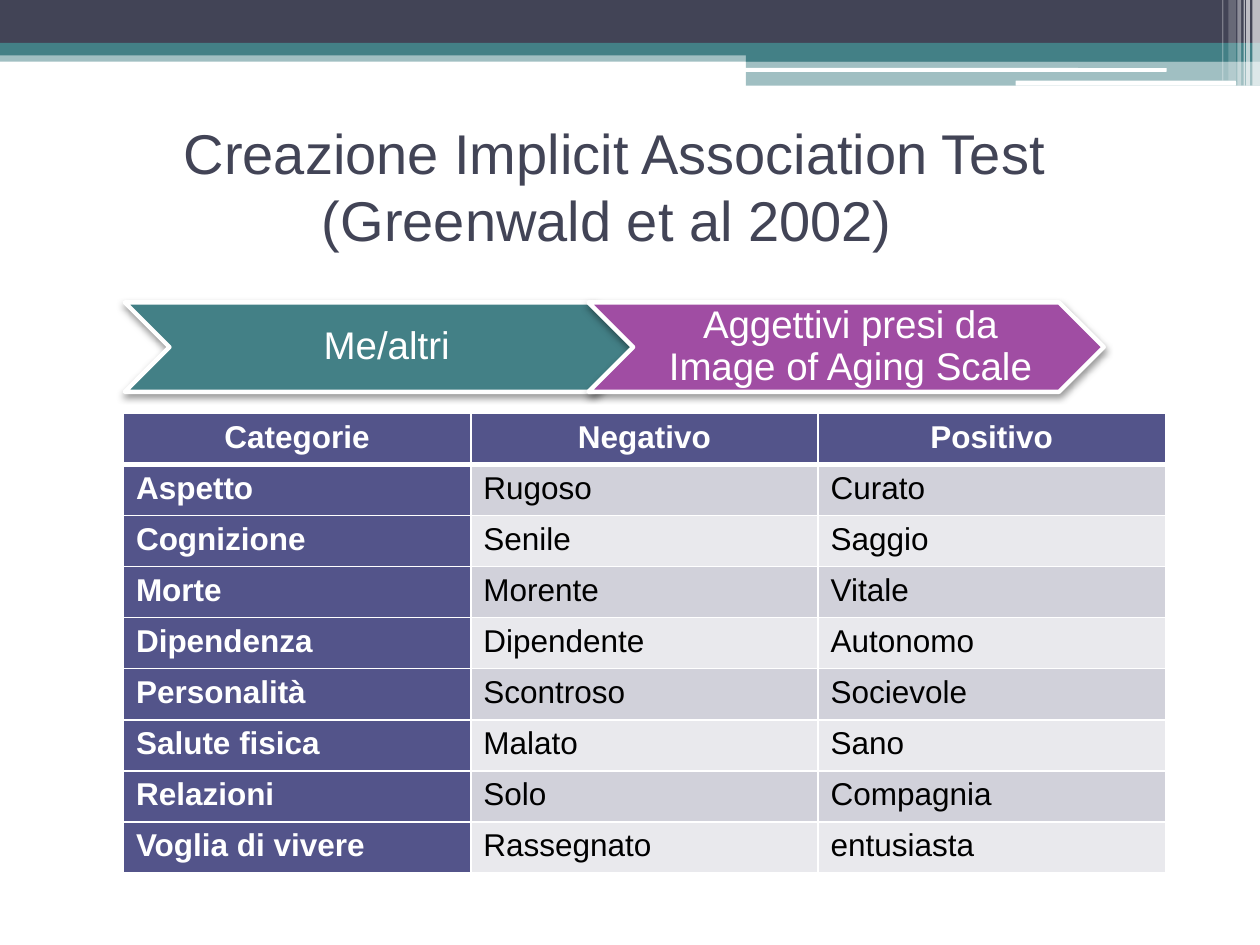
from lxml import etree
from pptx import Presentation
from pptx.dml.color import RGBColor
from pptx.enum.shapes import MSO_SHAPE
from pptx.enum.text import MSO_ANCHOR, PP_ALIGN
from pptx.oxml.ns import qn
from pptx.util import Inches, Pt

CENTER, LEFT = PP_ALIGN.CENTER, PP_ALIGN.LEFT
MIDDLE = MSO_ANCHOR.MIDDLE
RECT, ROUND, CHEVRON = MSO_SHAPE.RECTANGLE, MSO_SHAPE.ROUNDED_RECTANGLE, MSO_SHAPE.CHEVRON
FONT = "Arial"
COLORS = {
    "white": "FFFFFF", "black": "000000", "navy": "424456", "teal": "438086",
    "purple": "A04DA3", "indigo": "53548A", "band_dark": "D1D1DA", "band_light": "E9E9ED",
}

# Content
TITLE = "Creazione Implicit Association Test (Greenwald et al 2002) "
STEPS = [("Me/altri", "teal"), ("Aggettivi presi da Image of Aging Scale", "purple")]
ROWS = [
    ("Categorie", "Negativo", "Positivo"),
    ("Aspetto", "Rugoso", "Curato"),
    ("Cognizione", "Senile", "Saggio"),
    ("Morte", "Morente", "Vitale"),
    ("Dipendenza", "Dipendente", "Autonomo"),
    ("Personalità", "Scontroso", "Socievole"),
    ("Salute fisica", "Malato", "Sano"),
    ("Relazioni", "Solo", "Compagnia"),
    ("Voglia di vivere", "Rassegnato", "entusiasta"),
]

# Header bands: shape, left, top, width, height, colour, opacity in percent
BANDS = [
    (RECT, 0, 0.4, 10, 0.09, "teal", 50),
    (RECT, 0, 0, 10, 0.34, "navy", 100),
    (RECT, 0, 0.34, 10, 0.1, "teal", 100),
    (RECT, 5.92, 0.39, 4.08, 0.1, "teal", 100),
    (RECT, 5.92, 0.48, 4.08, 0.2, "teal", 50),
    (ROUND, 5.91, 0.54, 3.35, 0.03, "white", 100),
    (ROUND, 8.06, 0.64, 1.75, 0.04, "white", 100),
]
# Vertical stripes at the right edge: left, width, height, opacity
STRIPES = [
    (9.94, 0.06, 0.68, 65), (9.89, 0.03, 0.68, 65), (9.87, 0.01, 0.68, 60),
    (9.82, 0.03, 0.68, 40), (9.75, 0.06, 0.64, 20), (9.7, 0.01, 0.64, 30),
]


def rgb(name):
    return RGBColor.from_string(COLORS[name])


def write(tf, text, size=18, color="white", bold=False, align=LEFT, spacing=None):
    p = tf.paragraphs[0]
    p.alignment = align
    if spacing:
        p.line_spacing = spacing
    r = p.add_run()
    r.text = text
    r.font.name, r.font.size, r.font.bold = FONT, Pt(size), bold
    r.font.color.rgb = rgb(color)


def add_color(parent, name, opacity=100):
    clr = etree.SubElement(parent, qn("a:srgbClr"), val=COLORS[name])
    if opacity < 100:
        etree.SubElement(clr, qn("a:alpha"), val=str(opacity * 1000))


def add_shape(kind, left, top, width, height, color, opacity=100):
    sp = s.shapes.add_shape(kind, Inches(left), Inches(top), Inches(width), Inches(height))
    sp.shadow.inherit = False
    sp.fill.solid()
    sp.fill.fore_color.rgb = rgb(color)
    sp.line.fill.background()
    if opacity < 100:
        fill = sp._element.spPr.find(qn("a:solidFill"))
        fill.clear()
        add_color(fill, color, opacity)
    return sp


def add_shadow(sp):
    effects = sp._element.spPr.find(qn("a:effectLst"))
    shadow = etree.SubElement(effects, qn("a:outerShdw"), blurRad=str(Pt(4.1)),
                              dist=str(Pt(2)), dir="5400000", rotWithShape="0")
    add_color(shadow, "black", 40)


def set_borders(cell, top, bottom):
    tcPr = cell._tc.get_or_add_tcPr()
    for i, (side, width) in enumerate([("L", 1), ("R", 1), ("T", top), ("B", bottom)]):
        ln = etree.Element(qn(f"a:ln{side}"), w=str(Pt(width)))
        add_color(etree.SubElement(ln, qn("a:solidFill")), "white")
        tcPr.insert(i, ln)


prs = Presentation()
prs.slide_width, prs.slide_height = Inches(10), Inches(7.5)
s = prs.slides.add_slide(prs.slide_layouts[5])

# Header decoration
for kind, left, top, width, height, color, opacity in BANDS:
    add_shape(kind, left, top, width, height, color, opacity)
for left, width, height, opacity in STRIPES:
    add_shape(RECT, left, 0, width, height, "white", opacity)

# Title
title = s.shapes.title
title.left, title.top = Inches(0.51), Inches(0.92)
title.width, title.height = Inches(8.74), Inches(1.1)
title.text_frame.word_wrap = True
title.text_frame.vertical_anchor = MIDDLE
write(title.text_frame, TITLE, size=32, color="navy", align=CENTER)

# Chevron steps
for i, (text, color) in enumerate(STEPS):
    sp = add_shape(CHEVRON, 0.99 + 3.68 * i, 2.4, 4.09, 0.71, color)
    sp.line.color.rgb = rgb("white")
    sp.line.width = Pt(2.5)
    add_shadow(sp)
    tf = sp.text_frame
    tf.word_wrap, tf.vertical_anchor = True, MIDDLE
    tf.margin_left = Inches(0.1)
    tf.margin_top = tf.margin_right = tf.margin_bottom = Inches(0.03)
    write(tf, text, size=22, align=CENTER, spacing=0.9)

# Table
table = s.shapes.add_table(len(ROWS), len(ROWS[0]), Inches(0.98), Inches(3.28),
                           Inches(8.27), Inches(3.65)).table
table.first_col = True
for i, row in enumerate(ROWS):
    for j, text in enumerate(row):
        cell = table.cell(i, j)
        heading = i == 0 or j == 0
        band = "band_dark" if i % 2 else "band_light"
        cell.fill.solid()
        cell.fill.fore_color.rgb = rgb("indigo" if heading else band)
        set_borders(cell, top=3 if i == 1 else 1, bottom=3 if i == 0 else 1)
        write(cell.text_frame, text, color="white" if heading else "black",
              bold=heading, align=CENTER if i == 0 else LEFT)

prs.save("out.pptx")
